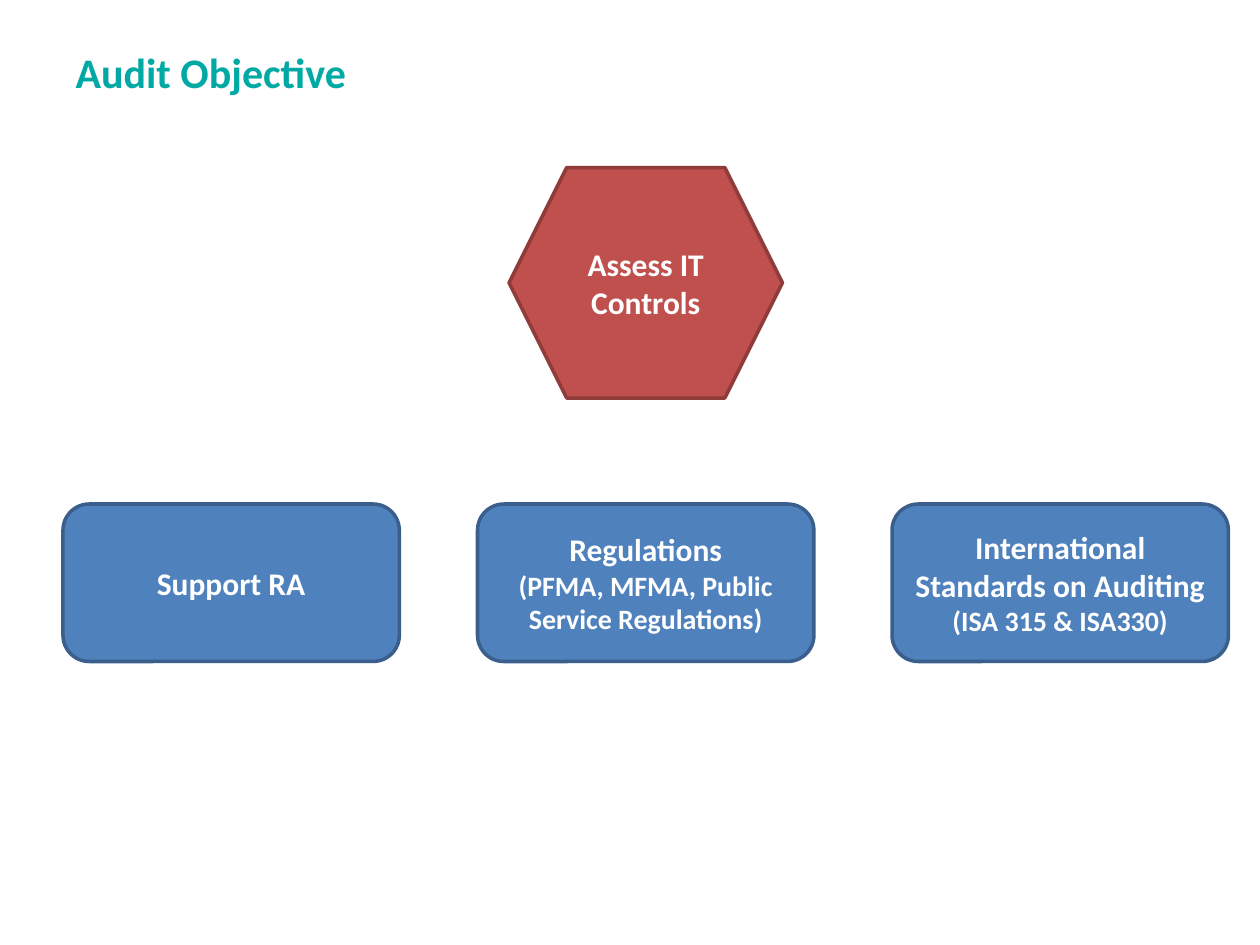
from pptx import Presentation
from pptx.dml.color import RGBColor
from pptx.enum.shapes import MSO_SHAPE
from pptx.enum.text import MSO_ANCHOR, PP_ALIGN
from pptx.util import Inches, Pt

FONT = "Calibri"
COLOURS = {
    "title": "00A9A4",
    "text": "FFFFFF",
    "objective": "C0504D",
    "objective_line": "8E3B39",
    "driver": "4F81BD",
    "driver_line": "3A5F8C",
}
DRIVERS = [
    ["Support RA"],
    ["Regulations", "(PFMA, MFMA, Public Service Regulations)"],
    ["International Standards on Auditing", "(ISA 315 & ISA330)"],
]
HEADING_SIZE, DETAIL_SIZE = 18, 16
DRIVER_LEFT, DRIVER_STEP = 0.5, 3.29


def colour(name):
    return RGBColor.from_string(COLOURS[name])


def format_paragraph(paragraph, size, colour_name, alignment):
    paragraph.alignment = alignment
    for run in paragraph.runs:
        run.font.name = FONT
        run.font.size = Pt(size)
        run.font.bold = True
        run.font.color.rgb = colour(colour_name)


def set_title(slide, text):
    title = slide.shapes.title
    title.left, title.top = Inches(0.5), Inches(0.3)
    title.width, title.height = Inches(8.83), Inches(0.53)
    text_frame = title.text_frame
    text_frame.text = text
    text_frame.vertical_anchor = MSO_ANCHOR.MIDDLE
    format_paragraph(text_frame.paragraphs[0], 24, "title", PP_ALIGN.LEFT)


def add_box(slide, kind, left, top, width, height, style, lines):
    """Add a filled shape with a heading and an optional smaller detail line."""
    shape = slide.shapes.add_shape(
        kind, Inches(left), Inches(top), Inches(width), Inches(height))
    shape.shadow.inherit = False
    shape.fill.solid()
    shape.fill.fore_color.rgb = colour(style)
    shape.line.color.rgb = colour(f"{style}_line")
    shape.line.width = Pt(2)

    text_frame = shape.text_frame
    text_frame.text = "\n".join(lines)
    text_frame.word_wrap = True
    text_frame.vertical_anchor = MSO_ANCHOR.MIDDLE
    for paragraph, size in zip(text_frame.paragraphs, (HEADING_SIZE, DETAIL_SIZE)):
        format_paragraph(paragraph, size, "text", PP_ALIGN.CENTER)


def main():
    presentation = Presentation()
    presentation.slide_width, presentation.slide_height = Inches(10), Inches(7.5)
    slide = presentation.slides.add_slide(presentation.slide_layouts[5])
    set_title(slide, "Audit Objective")

    # Central objective
    add_box(slide, MSO_SHAPE.HEXAGON, 4.04, 1.33, 2.17, 1.83,
            "objective", ["Assess IT Controls"])

    # Row of drivers behind the objective
    for index, lines in enumerate(DRIVERS):
        add_box(slide, MSO_SHAPE.ROUNDED_RECTANGLE,
                DRIVER_LEFT + index * DRIVER_STEP, 4, 2.67, 1.25, "driver", lines)

    presentation.save("out.pptx")


if __name__ == "__main__":
    main()
